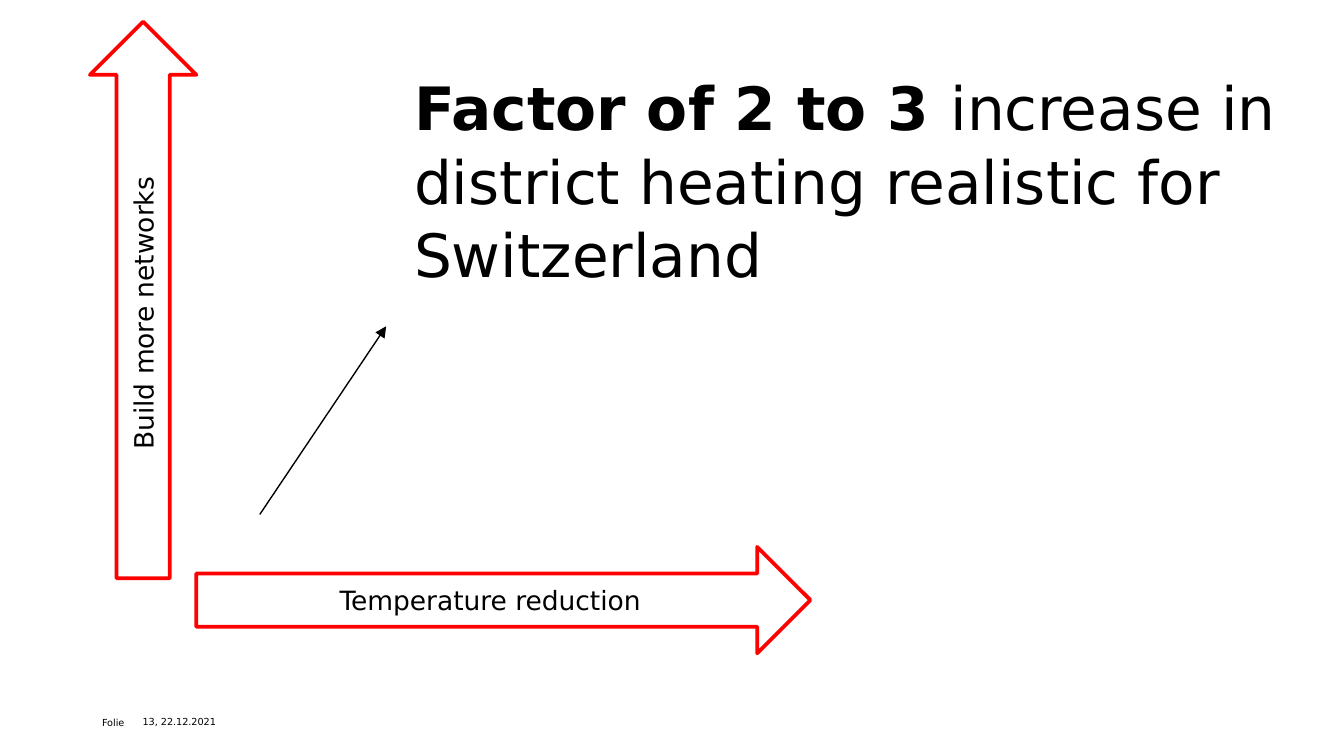
from dataclasses import dataclass

from lxml.etree import SubElement
from pptx import Presentation
from pptx.dml.color import RGBColor
from pptx.enum.shapes import MSO_CONNECTOR, MSO_SHAPE
from pptx.enum.text import MSO_ANCHOR, MSO_AUTO_SIZE, PP_ALIGN
from pptx.oxml.ns import qn
from pptx.util import Pt


@dataclass(frozen=True)
class Theme:
    font: str = "DejaVu Sans"
    ink: RGBColor = RGBColor(0, 0, 0)
    paper: RGBColor = RGBColor(255, 255, 255)
    accent: RGBColor = RGBColor(255, 0, 0)
    headline_size: float = 32
    label_size: float = 14.2
    footer_size: float = 5.2


THEME = Theme()


def format_runs(paragraph, size):
    for run in paragraph.runs:
        run.font.name = THEME.font
        run.font.size = Pt(size)
        run.font.color.rgb = THEME.ink


def place(part, left, top, width, height):
    part.left, part.top = Pt(left), Pt(top)
    part.width, part.height = Pt(width), Pt(height)


def set_margins(frame, left, top, right, bottom):
    frame.margin_left, frame.margin_top = Pt(left), Pt(top)
    frame.margin_right, frame.margin_bottom = Pt(right), Pt(bottom)


def add_headline(slide, left, top, width, height):
    headline = slide.shapes.title
    place(headline, left, top, width, height)
    frame = headline.text_frame
    frame.word_wrap = True
    frame.auto_size = MSO_AUTO_SIZE.NONE
    frame.vertical_anchor = MSO_ANCHOR.TOP
    set_margins(frame, 7.2, 3.6, 7.2, 3.6)
    statement = frame.paragraphs[0]
    statement.alignment = PP_ALIGN.LEFT
    statement.line_spacing = 1.03
    for wording, bold in (
        ("Factor of 2 to 3 ", True),
        ("increase in district heating realistic for Switzerland", False),
    ):
        run = statement.add_run()
        run.text = wording
        run.font.bold = bold
    format_runs(statement, THEME.headline_size)


def add_axis_arrow(slide, label, left, top, length, thickness, rotation=0):
    axis = slide.shapes.add_shape(
        MSO_SHAPE.RIGHT_ARROW, Pt(left), Pt(top), Pt(length), Pt(thickness)
    )
    axis.rotation = rotation
    axis.shadow.inherit = False
    axis.fill.solid()
    axis.fill.fore_color.rgb = THEME.paper
    axis.line.color.rgb = THEME.accent
    axis.line.width = Pt(2)
    frame = axis.text_frame
    frame.text = label
    frame.vertical_anchor = MSO_ANCHOR.MIDDLE
    frame.paragraphs[0].alignment = PP_ALIGN.CENTER
    format_runs(frame.paragraphs[0], THEME.label_size)


def add_trend_arrow(slide, left, top, width, height):
    trend = slide.shapes.add_connector(
        MSO_CONNECTOR.STRAIGHT, Pt(left), Pt(top + height), Pt(left + width), Pt(top)
    )
    trend.line.color.rgb = THEME.ink
    trend.line.width = Pt(0.75)
    SubElement(trend.line._get_or_add_ln(), qn("a:tailEnd"), type="triangle")
    SubElement(trend._element.spPr, qn("a:effectLst"))


def add_axes(slide, left, top, width, height):
    thickness = 57
    upright = height - thickness + 16.8
    add_axis_arrow(
        slide, "Temperature reduction",
        left + thickness, top + height - thickness, width - thickness, thickness,
    )
    add_axis_arrow(
        slide, "Build more networks",
        left + (thickness - upright) / 2, top + (upright - thickness) / 2,
        upright, thickness, rotation=270,
    )
    add_trend_arrow(slide, left + 91, top + 163.2, 67.7, 100.8)


def add_footer(slide, left, top, width, height):
    for wording, indent, extent, margins in (
        ("Folie", 0, 213, (4.3, 4.3, 4.3, 4.3)),
        ("13, 22.12.2021", 20.2, width - 20.2, (5.8, 4.3, 5.8, 5.8)),
    ):
        note = slide.shapes.add_textbox(Pt(left + indent), Pt(top), Pt(extent), Pt(height))
        frame = note.text_frame
        frame.word_wrap = True
        set_margins(frame, *margins)
        frame.text = wording
        format_runs(frame.paragraphs[0], THEME.footer_size)


def main():
    deck = Presentation()
    deck.slide_width, deck.slide_height = Pt(720), Pt(405)
    slide = deck.slides.add_slide(deck.slide_layouts[5])
    add_footer(slide, 50.4, 380.9, 658.8, 23.8)
    add_headline(slide, 214.6, 33.1, 493.2, 123.8)
    add_axes(slide, 48.2, 11.6, 386, 338.4)
    deck.save("out.pptx")


if __name__ == "__main__":
    main()
